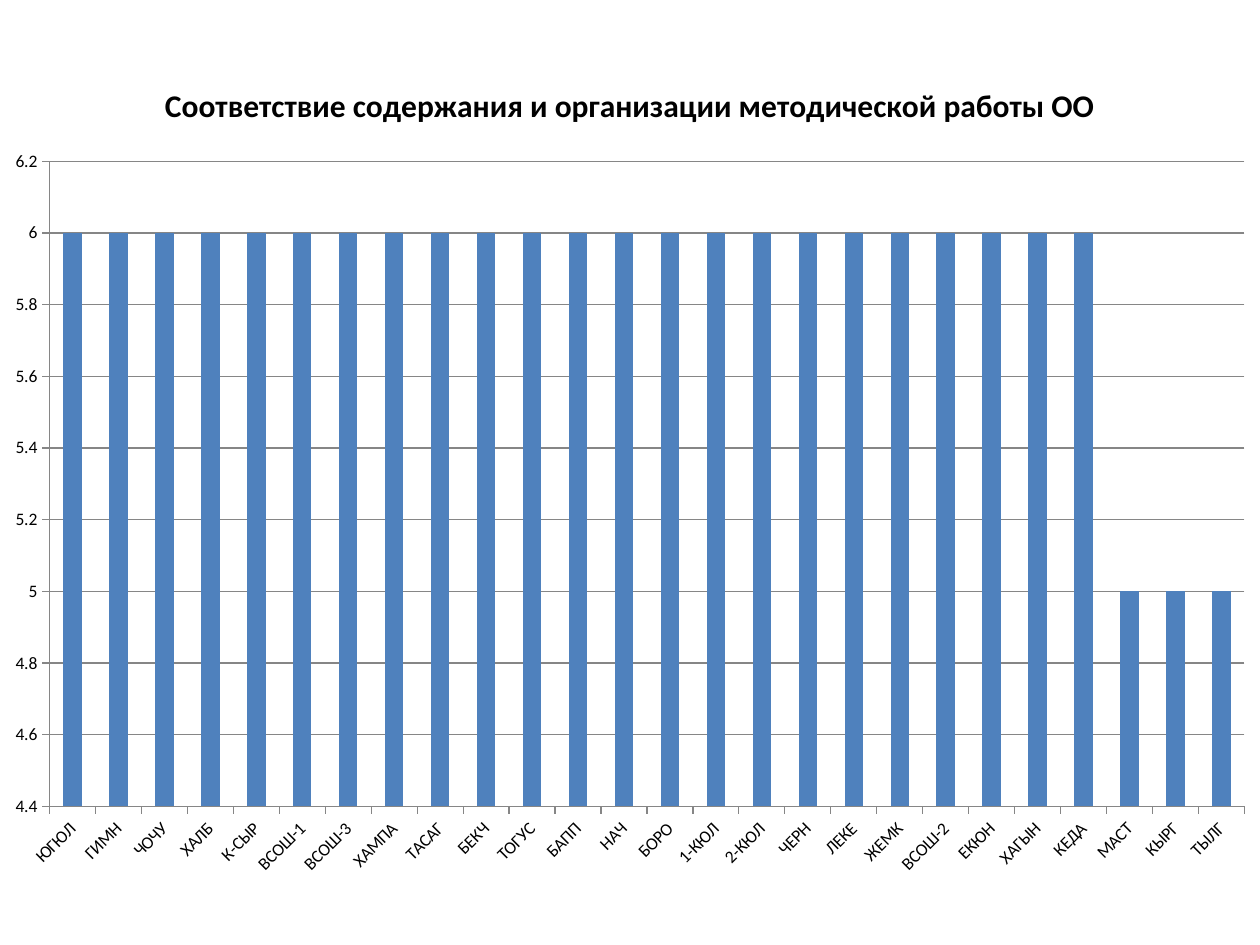
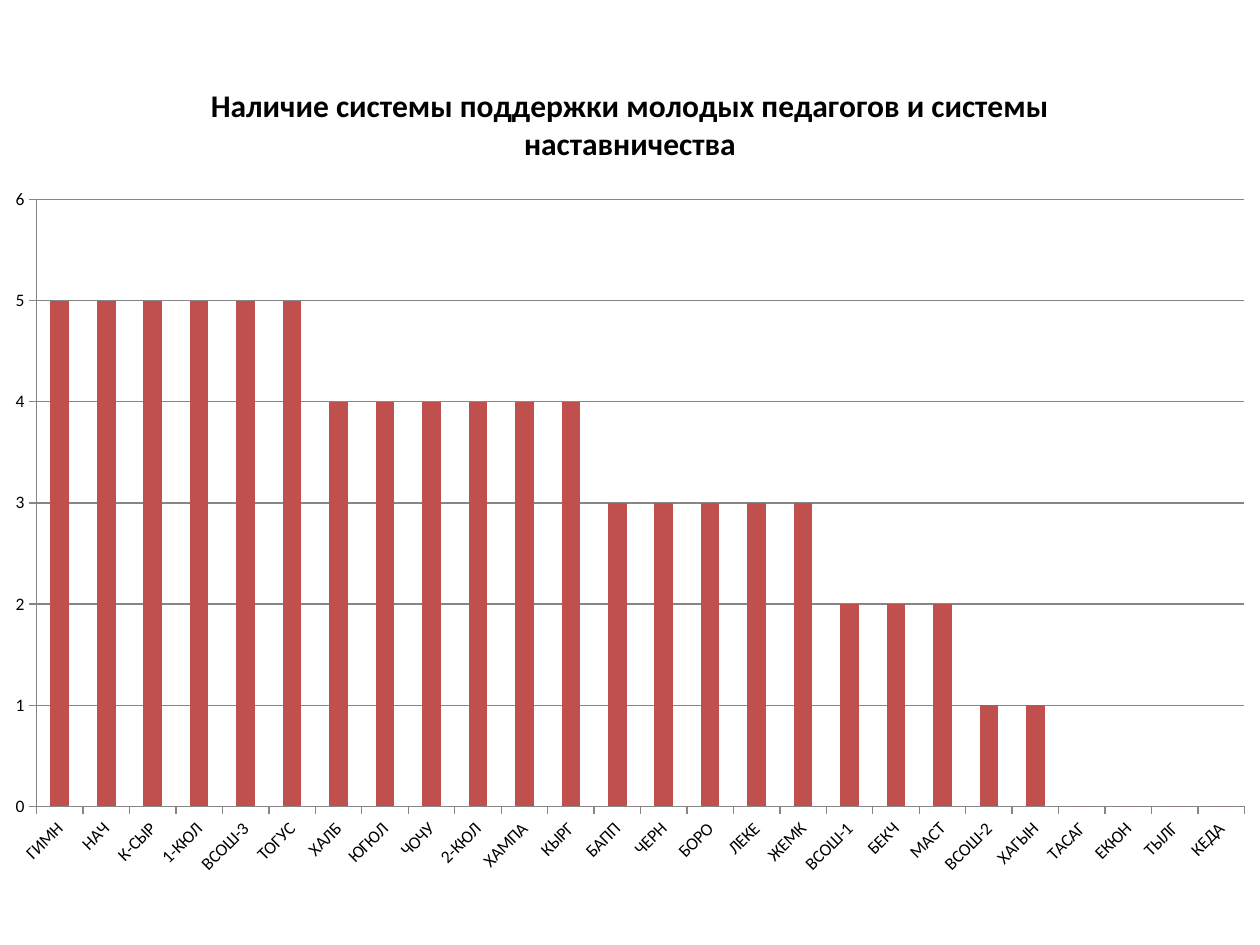
"""Build two column-chart slides on methodical work and mentoring in schools."""
from dataclasses import dataclass

from pptx import Presentation, util as u
from pptx.chart.data import CategoryChartData
from pptx.dml.color import RGBColor
from pptx.enum import chart as charts


@dataclass(frozen=True)
class Theme:
    font: str = "Calibri"
    ink: str = "000000"
    grid: str = "868686"
    blue: str = "4F81BD"
    red: str = "C0504D"
    title_size: int = 18
    label_size: int = 10
    line_width: float = 0.75


THEME = Theme()
WIDTH, HEIGHT = 10, 7.5
SIDE_BLEED, CHART_TOP, CHART_HEIGHT = 0.08, 0.43, 6.64
BLANK_LAYOUT = 6

SLIDES = [
    {
        "title": "Соответствие содержания и организации методической работы ОО",
        "kind": charts.XL_CHART_TYPE.COLUMN_STACKED,
        "color": THEME.blue,
        "axis": (4.4, 6.2, 0.2),
        "schools_by_score": {
            6: "ЮГЮЛ ГИМН ЧОЧУ ХАЛБ К-СЫР ВСОШ-1 ВСОШ-3 ХАМПА ТАСАГ БЕКЧ ТОГУС БАПП "
               "НАЧ БОРО 1-КЮЛ 2-КЮЛ ЧЕРН ЛЕКЕ ЖЕМК ВСОШ-2 ЕКЮН ХАГЫН КЕДА",
            5: "МАСТ КЫРГ ТЫЛГ",
        },
    },
    {
        "title": "Наличие системы поддержки молодых педагогов и системы наставничества",
        "kind": charts.XL_CHART_TYPE.COLUMN_CLUSTERED,
        "color": THEME.red,
        "axis": (0, 6, 1),
        "schools_by_score": {
            5: "ГИМН НАЧ К-СЫР 1-КЮЛ ВСОШ-3 ТОГУС",
            4: "ХАЛБ ЮГЮЛ ЧОЧУ 2-КЮЛ ХАМПА КЫРГ",
            3: "БАПП ЧЕРН БОРО ЛЕКЕ ЖЕМК",
            2: "ВСОШ-1 БЕКЧ МАСТ",
            1: "ВСОШ-2 ХАГЫН",
            0: "ТАСАГ ЕКЮН ТЫЛГ КЕДА",
        },
    },
]


def set_font(font, size, bold=False):
    font.name, font.size, font.bold = THEME.font, u.Pt(size), bold
    font.color.rgb = RGBColor.from_string(THEME.ink)


def set_line(line):
    line.color.rgb = RGBColor.from_string(THEME.grid)
    line.width = u.Pt(THEME.line_width)


def score_data(schools_by_score):
    pairs = [(school, score) for score, names in schools_by_score.items()
             for school in names.split()]
    data = CategoryChartData(number_format="General")
    data.categories = [school for school, _ in pairs]
    data.add_series("Series 1", [score for _, score in pairs])
    return data


def style_title(chart, wording):
    chart.has_title = True
    chart.chart_title.include_in_layout = False
    para = chart.chart_title.text_frame.paragraphs[0]
    para.text = wording
    set_font(para.font, THEME.title_size, bold=True)


def style_axes(chart, limits):
    values = chart.value_axis
    values.minimum_scale, values.maximum_scale, values.major_unit = limits
    values.has_major_gridlines = True
    set_line(values.major_gridlines.format.line)
    for axis in (chart.category_axis, values):
        axis.major_tick_mark = charts.XL_TICK_MARK.OUTSIDE
        axis.minor_tick_mark = charts.XL_TICK_MARK.NONE
        set_line(axis.format.line)


def add_score_slide(deck, content):
    page = deck.slides.add_slide(deck.slide_layouts[BLANK_LAYOUT])
    frame = page.shapes.add_chart(
        content["kind"], u.Inches(-SIDE_BLEED), u.Inches(CHART_TOP),
        u.Inches(WIDTH + 2 * SIDE_BLEED), u.Inches(CHART_HEIGHT),
        score_data(content["schools_by_score"]))
    chart = frame.chart
    set_font(chart.font, THEME.label_size)
    chart.has_legend = False
    style_title(chart, content["title"])
    style_axes(chart, content["axis"])
    plot = chart.plots[0]
    plot.gap_width = 150
    plot.vary_by_categories = False
    fill = plot.series[0].format.fill
    fill.solid()
    fill.fore_color.rgb = RGBColor.from_string(content["color"])


def main():
    deck = Presentation()
    deck.slide_width, deck.slide_height = u.Inches(WIDTH), u.Inches(HEIGHT)
    for content in SLIDES:
        add_score_slide(deck, content)
    deck.save("out.pptx")


if __name__ == "__main__":
    main()
